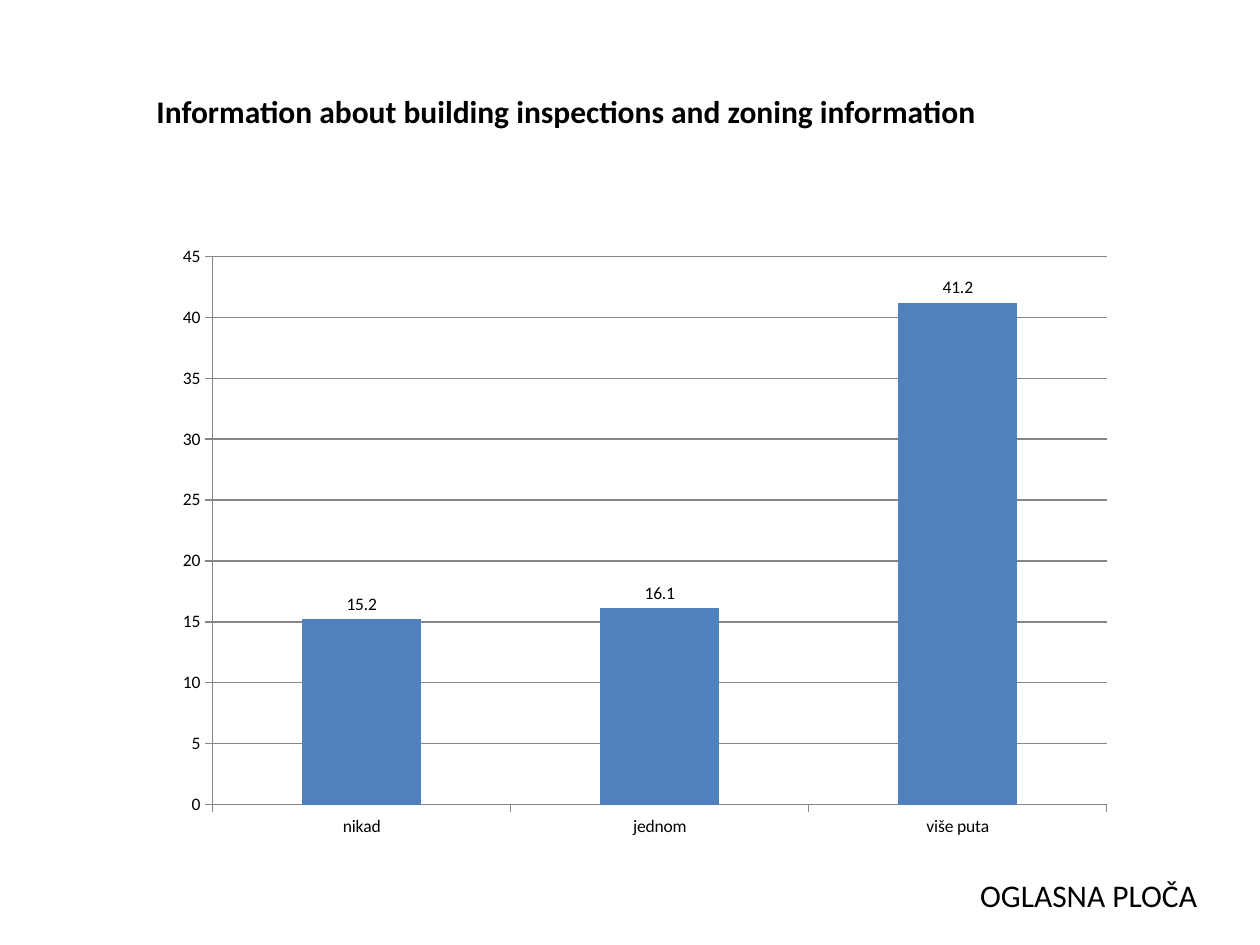
from pptx import Presentation
from pptx.chart.data import CategoryChartData
from pptx.dml.color import RGBColor
from pptx.enum.chart import XL_CHART_TYPE, XL_LABEL_POSITION, XL_TICK_MARK
from pptx.enum.text import MSO_ANCHOR, MSO_AUTO_SIZE, PP_ALIGN
from pptx.util import Cm, Pt

BLACK = RGBColor(0x00, 0x00, 0x00)
BLUE = RGBColor(0x4F, 0x81, 0xBD)
GRAY = RGBColor(0x86, 0x86, 0x86)
FONT = "Calibri"


def style_font(font, size, bold=False):
    font.name = FONT
    font.size = Pt(size)
    font.bold = bold
    font.color.rgb = BLACK


def fill_text(box, text, bold=False):
    frame = box.text_frame
    frame.text = text
    frame.word_wrap = False
    frame.auto_size = MSO_AUTO_SIZE.SHAPE_TO_FIT_TEXT
    frame.vertical_anchor = MSO_ANCHOR.TOP
    paragraph = frame.paragraphs[0]
    paragraph.alignment = PP_ALIGN.LEFT
    style_font(paragraph.font, 18, bold)


presentation = Presentation()
presentation.slide_width = Cm(25.4)
presentation.slide_height = Cm(19.05)
slide = presentation.slides.add_slide(presentation.slide_layouts[5])

# Heading
heading = slide.shapes.title
heading.left, heading.top = Cm(2.9), Cm(1.73)
heading.width, heading.height = Cm(18.39), Cm(1.03)
fill_text(heading, "Information about building inspections and zoning information", bold=True)

# Frequency of use
frequencies = CategoryChartData(number_format="General")
frequencies.categories = ["nikad", "jednom", "više puta"]
frequencies.add_series("Series 1", [15.2, 16.1, 41.2])
chart = slide.shapes.add_chart(
    XL_CHART_TYPE.COLUMN_CLUSTERED, Cm(3.3), Cm(4.72), Cm(19.4), Cm(12.4), frequencies
).chart
chart.has_legend = False
chart.has_title = False
style_font(chart.font, 10)

columns = chart.plots[0]
columns.vary_by_categories = False
columns.gap_width = 150
columns.series[0].format.fill.solid()
columns.series[0].format.fill.fore_color.rgb = BLUE
columns.has_data_labels = True
columns.data_labels.show_value = True
columns.data_labels.position = XL_LABEL_POSITION.OUTSIDE_END
style_font(columns.data_labels.font, 10)

for axis in (chart.category_axis, chart.value_axis):
    axis.major_tick_mark = XL_TICK_MARK.OUTSIDE
    axis.minor_tick_mark = XL_TICK_MARK.NONE
    axis.format.line.color.rgb = GRAY
    style_font(axis.tick_labels.font, 10)

value_axis = chart.value_axis
value_axis.minimum_scale = 0
value_axis.maximum_scale = 45
value_axis.major_unit = 5
value_axis.has_major_gridlines = True
value_axis.major_gridlines.format.line.color.rgb = GRAY

# Section label
section = slide.shapes.add_textbox(Cm(19.51), Cm(17.53), Cm(5.2), Cm(1.03))
fill_text(section, "OGLASNA PLOČA")

presentation.save("out.pptx")
